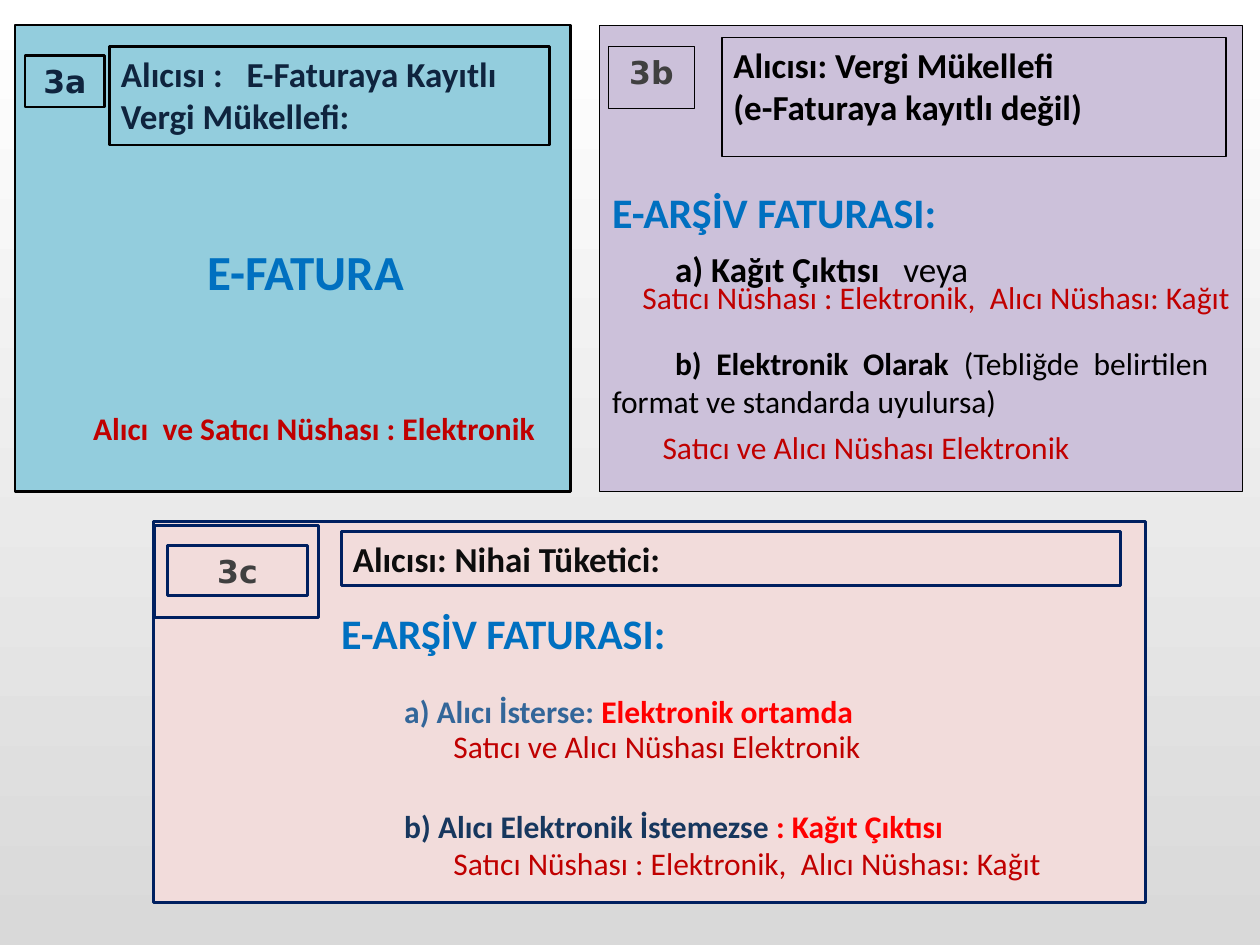
from dataclasses import dataclass
from typing import Optional

from pptx import Presentation
from pptx.dml.color import RGBColor
from pptx.enum.shapes import MSO_SHAPE
from pptx.enum.text import MSO_ANCHOR, PP_ALIGN
from pptx.util import Inches, Pt

RECTANGLE = MSO_SHAPE.RECTANGLE
TOP = MSO_ANCHOR.TOP
LEFT, CENTER, JUSTIFY = PP_ALIGN.LEFT, PP_ALIGN.CENTER, PP_ALIGN.JUSTIFY

COLORS = {
    "white": "FFFFFF", "gray": "D9D9D9", "black": "000000", "ink": "0F243E",
    "charcoal": "404040", "near_black": "0D0D0D", "navy": "002060",
    "aqua": "93CDDD", "lilac": "CCC1DA", "rose": "F2DCDB",
    "blue": "0070C0", "steel": "336699", "dark_blue": "17375E",
    "red": "FF0000", "dark_red": "C00000",
}


@dataclass
class Box:
    left: float
    top: float
    width: float
    height: float

    def lengths(self) -> list:
        return [Inches(n) for n in (self.left, self.top, self.width, self.height)]


@dataclass
class Run:
    text: str
    size: int
    color: str
    bold: bool = True
    font: str = "Calibri"


@dataclass
class Line:
    runs: list[Run]
    after: float = 0
    indent: float = 0


@dataclass
class Panel:
    fill: str
    border: str
    border_width: float
    frame: Box
    heading_box: Box
    heading: list[Line]
    badge_box: Box
    badge: Run
    body_box: Box
    body: list[Line]
    body_align: int = JUSTIFY
    badge_frame: Optional[Box] = None


def write_text(shape, lines: list[Line], align=LEFT, margin=0.1) -> None:
    frame = shape.text_frame
    frame.word_wrap = True
    frame.vertical_anchor = TOP
    frame.margin_left = frame.margin_right = Inches(margin)
    for index, line in enumerate(lines):
        paragraph = frame.add_paragraph() if index else frame.paragraphs[0]
        paragraph.alignment = align
        paragraph.space_after = Pt(line.after)
        if line.indent:
            paragraph._p.get_or_add_pPr().set("indent", str(Inches(line.indent)))
        for part in line.runs:
            run = paragraph.add_run()
            run.text = part.text
            run.font.name = part.font
            run.font.size = Pt(part.size)
            run.font.bold = part.bold
            run.font.color.rgb = RGBColor.from_string(COLORS[part.color])


def add_text(shapes, box: Box, lines: list[Line], align=LEFT) -> None:
    write_text(shapes.add_textbox(*box.lengths()), lines, align=align)


def add_rectangle(shapes, box: Box, panel: Panel):
    shape = shapes.add_shape(RECTANGLE, *box.lengths())
    shape.shadow.inherit = False
    shape.fill.solid()
    shape.fill.fore_color.rgb = RGBColor.from_string(COLORS[panel.fill])
    shape.line.color.rgb = RGBColor.from_string(COLORS[panel.border])
    shape.line.width = Pt(panel.border_width)
    return shape


def add_panel(slide, panel: Panel) -> None:
    shapes = slide.shapes.add_group_shape().shapes
    add_rectangle(shapes, panel.frame, panel)
    heading = add_rectangle(shapes, panel.heading_box, panel)
    write_text(heading, panel.heading, margin=0.09)
    if panel.badge_frame:
        add_rectangle(shapes, panel.badge_frame, panel)
    badge = add_rectangle(shapes, panel.badge_box, panel)
    write_text(badge, [Line([panel.badge])], align=CENTER)
    add_text(shapes, panel.body_box, panel.body, align=panel.body_align)


def badge_run(text: str, color: str) -> Run:
    return Run(text, 18, color, font="DejaVu Sans")


ARCHIVE_TITLE = Run("E-ARŞİV FATURASI:", 24, "blue")
BOTH_ELECTRONIC = "Satıcı ve Alıcı Nüshası Elektronik"
BUYER_ON_PAPER = "Satıcı Nüshası : Elektronik,  Alıcı Nüshası: Kağıt"

PANELS = [
    Panel(
        "aqua", "black", 1.5, Box(0.12, 0.2, 4.41, 3.7),
        Box(0.87, 0.37, 3.49, 0.78),
        [Line([Run("Alıcısı :   E-Faturaya Kayıtlı Vergi Mükellefi:", 20, "ink")])],
        Box(0.2, 0.44, 0.63, 0.41), badge_run("3a", "ink"),
        Box(0.83, 1.87, 3.19, 0.86), [Line([Run("E-FATURA", 28, "blue")])],
        body_align=CENTER,
    ),
    Panel(
        "lilac", "black", 0.75, Box(4.76, 0.2, 5.1, 3.7),
        Box(5.73, 0.3, 4, 0.94),
        [Line([Run("Alıcısı: Vergi Mükellefi", 20, "black")]),
         Line([Run("(e-Faturaya kayıtlı değil)", 20, "black")])],
        Box(4.83, 0.37, 0.68, 0.49), badge_run("3b", "charcoal"),
        Box(4.76, 1.43, 4.93, 2.01),
        [Line([ARCHIVE_TITLE], after=6),
         Line([Run("a) Kağıt Çıktısı ", 20, "black"),
               Run("  veya ", 20, "black", bold=False)], after=31.5, indent=0.5),
         Line([Run("b) Elektronik Olarak ", 18, "black"),
               Run("(Tebliğde belirtilen format ve standarda uyulursa) ",
                   18, "black", bold=False)], after=6, indent=0.5)],
    ),
    Panel(
        "rose", "navy", 1.75, Box(1.22, 4.14, 7.87, 3.02),
        Box(2.71, 4.22, 6.18, 0.43),
        [Line([Run("Alıcısı: Nihai Tüketici:", 20, "near_black")])],
        Box(1.33, 4.33, 1.11, 0.4), badge_run("3c", "charcoal"),
        Box(2.61, 4.77, 6.28, 2.59),
        [Line([ARCHIVE_TITLE], after=19.5),
         Line([Run("a) Alıcı İsterse: ", 18, "steel"),
               Run("Elektronik ortamda", 18, "red")], after=44, indent=0.5),
         Line([Run("b) Alıcı Elektronik İstemezse ", 18, "dark_blue"),
               Run(": Kağıt Çıktısı", 18, "red")], indent=0.5)],
        badge_frame=Box(1.23, 4.17, 1.3, 0.73),
    ),
]

COPY_NOTES = [
    (Box(0.64, 3.2, 3.81, 0.4), "Alıcı  ve Satıcı Nüshası : Elektronik", True),
    (Box(5, 2.16, 4.88, 0.4), BUYER_ON_PAPER, False),
    (Box(5.16, 3.35, 4.88, 0.4), BOTH_ELECTRONIC, False),
    (Box(3.5, 5.72, 4.88, 0.4), BOTH_ELECTRONIC, False),
    (Box(3.5, 6.65, 4.88, 0.4), BUYER_ON_PAPER, False),
]


def set_background(slide) -> None:
    fill = slide.background.fill
    fill.gradient()
    fill.gradient_angle = 270
    for stop, position, color in zip(fill.gradient_stops, (0, 1), ("white", "gray")):
        stop.position = position
        stop.color.rgb = RGBColor.from_string(COLORS[color])


def main() -> None:
    presentation = Presentation()
    presentation.slide_width, presentation.slide_height = Inches(10), Inches(7.5)
    slide = presentation.slides.add_slide(presentation.slide_layouts[6])
    set_background(slide)
    for panel in PANELS:
        add_panel(slide, panel)
    for box, text, bold in COPY_NOTES:
        add_text(slide.shapes, box, [Line([Run(text, 18, "dark_red", bold=bold)])])
    presentation.save("out.pptx")


if __name__ == "__main__":
    main()
